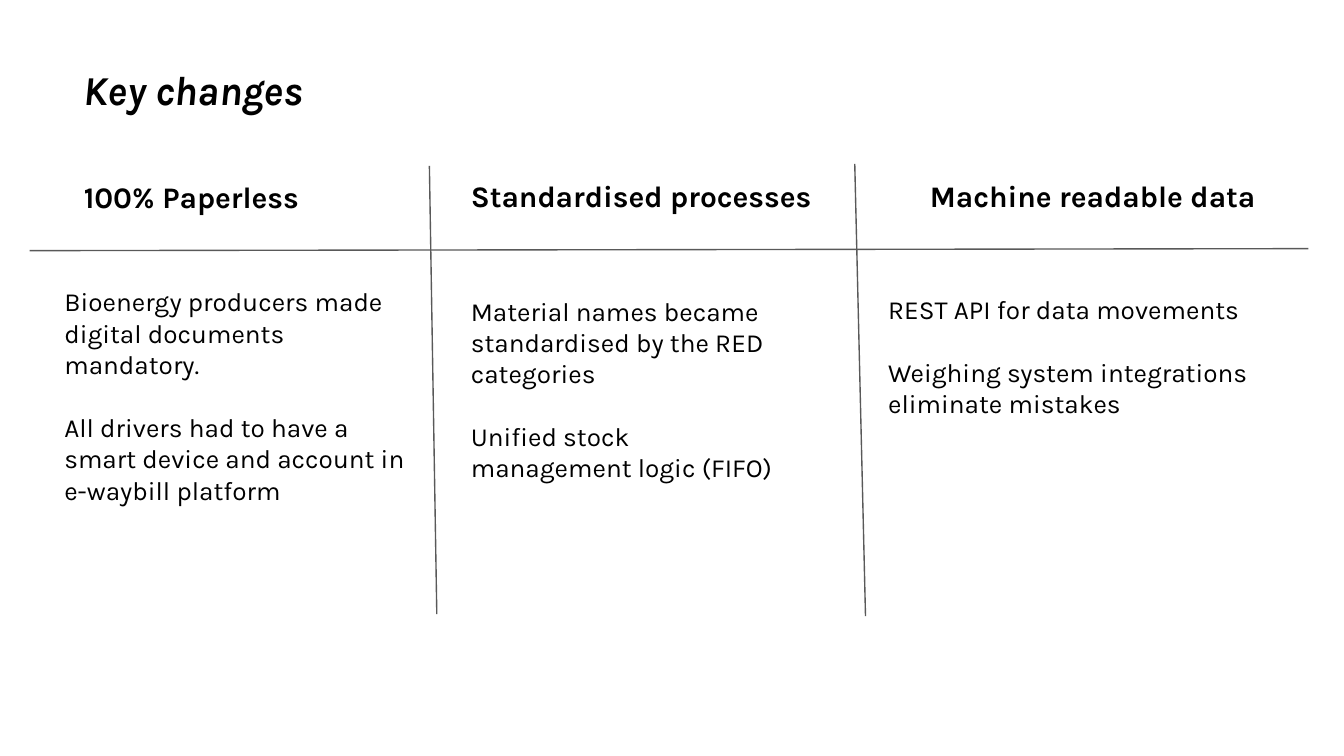
from pptx import Presentation
from pptx import util as u
from pptx.dml.color import RGBColor
from pptx.enum import shapes
from lxml import etree

PX = 4572  # EMU per px, 200 px to the inch
FONT = "Karla"
BLACK, GREY, WHITE = "000000", "595959", "FFFFFF"
A_NS = "http://schemas.openxmlformats.org/drawingml/2006/main"


def px(n):
    return u.Emu(n * PX)


def color(value):
    return RGBColor.from_string(value)


class SlideBuilder:
    """Holds the style and the current slide."""

    def __init__(self, prs):
        self.slide = prs.slides.add_slide(prs.slide_layouts[6])
        fill = self.slide.background.fill
        fill.solid()
        fill.fore_color.rgb = color(WHITE)

    def text(self, box, paragraphs, size, bold=False, italic=False, gap=0):
        sp = self.slide.shapes.add_textbox(*map(px, box))
        tf = sp.text_frame
        tf.word_wrap = True
        tf.margin_left = tf.margin_right = tf.margin_top = tf.margin_bottom = px(20)
        for i, content in enumerate(paragraphs):
            p = tf.add_paragraph() if i else tf.paragraphs[0]
            p.text = content
            if i:
                p.space_before = u.Pt(gap)
            p.font.name, p.font.size = FONT, u.Pt(size)
            p.font.bold, p.font.italic = bold, italic
            p.font.color.rgb = color(BLACK)

    def heading(self, box, content):
        self.text(box, [content], 16, bold=True)

    def body(self, box, paragraphs):
        self.text(box, paragraphs, 14, gap=16.8)  # gap of one line

    def line(self, *ends):
        cx = self.slide.shapes.add_connector(shapes.MSO_CONNECTOR.STRAIGHT, *map(px, ends))
        cx.line.color.rgb = color(GREY)
        cx.line.width = u.Pt(0.75)
        etree.SubElement(cx._element.spPr, f"{{{A_NS}}}effectLst")


def main():
    prs = Presentation()
    prs.slide_width, prs.slide_height = px(2000), px(1125)
    s = SlideBuilder(prs)

    # Title
    s.text((105, 76, 1080, 114), ["Key changes"], 22, bold=True, italic=True)

    # Columns: heading box, heading, body box, body paragraphs
    columns = [
        ((105, 246, 620, 188), "100% Paperless", (76, 405, 558, 558),
         ["Bioenergy producers made digital documents mandatory.",
          "All drivers had to have a smart device and account in e-waybill platform"]),
        ((681, 244, 598, 94), "Standardised processes", (681, 419, 514, 372),
         ["Material names became standardised by the RED categories",
          "Unified stock management logic (FIFO)"]),
        ((1364, 244, 558, 94), "Machine readable data", (1302, 417, 646, 368),
         ["REST API for data movements",
          "Weighing system integrations eliminate mistakes"]),
    ]
    for heading_box, heading, body_box, paragraphs in columns:
        s.heading(heading_box, heading)
        s.body(body_box, paragraphs)

    # Column dividers and the rule under the headings
    s.line(639, 247, 650, 914)
    s.line(1272, 244, 1288, 917)
    s.line(44, 373, 1947, 370)

    prs.save("out.pptx")


if __name__ == "__main__":
    main()
